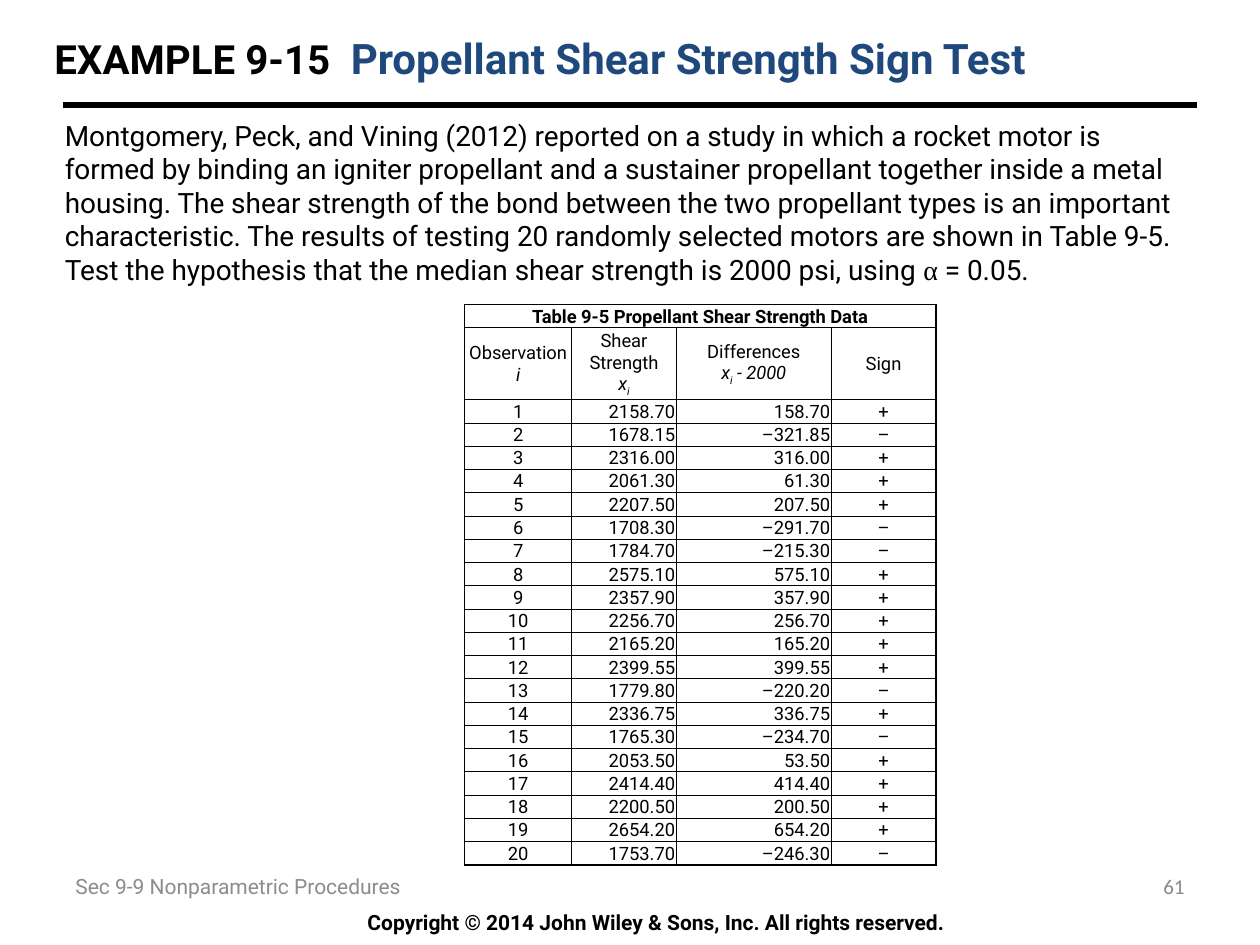
from copy import deepcopy
from lxml.etree import SubElement
from pptx import Presentation
from pptx.dml.color import RGBColor
from pptx.enum.shapes import MSO_CONNECTOR
from pptx.enum.text import MSO_ANCHOR, PP_ALIGN
from pptx.oxml.ns import qn
from pptx.util import Pt

FONT = "Roboto"
BLACK = "000000"
HYPOTHESIZED_MEDIAN = 2000
STRENGTHS = [
    2158.70, 1678.15, 2316.00, 2061.30, 2207.50, 1708.30, 1784.70,
    2575.10, 2357.90, 2256.70, 2165.20, 2399.55, 1779.80, 2336.75,
    1765.30, 2053.50, 2414.40, 2200.50, 2654.20, 1753.70,
]
HEADINGS = [
    [("Observation\n", {}), ("i", {"italic": True})],
    [("Shear Strength\n", {}), ("x", {"italic": True}),
     ("i", {"italic": True, "baseline": -25})],
    [("Differences\n", {}), ("x", {"italic": True}),
     ("i", {"italic": True, "baseline": -25}), (" - 2000", {"italic": True})],
    [("Sign", {})],
]


def color(value):
    return RGBColor.from_string(value)


def add_span(para, text, size, name=FONT, shade=BLACK, bold=False, italic=False, baseline=0):
    span = para.add_run()
    span.text = text.rstrip("\n")
    span.font.size = Pt(size)
    span.font.name = name
    span.font.color.rgb = color(shade)
    span.font.bold = bold
    span.font.italic = italic
    properties = span.font._element
    if baseline:
        properties.set("baseline", str(baseline * 1000))
    if text.endswith("\n"):
        para.add_line_break()
        para._p[-1].append(deepcopy(properties))


def add_text(page, box, spans, align=PP_ALIGN.LEFT, anchor=MSO_ANCHOR.MIDDLE):
    frame = page.shapes.add_textbox(*map(Pt, box)).text_frame
    frame.word_wrap = True
    frame.vertical_anchor = anchor
    para = frame.paragraphs[0]
    para.alignment = align
    for text, style in spans:
        add_span(para, text, **style)
    return para


def add_title(page, box):
    para = add_text(page, box, [
        ("EXAMPLE 9-15\t", {"size": 23, "bold": True}),
        ("Propellant Shear Strength Sign Test", {"size": 24, "shade": "1F497D", "bold": True}),
    ])
    tabs = SubElement(para._p.get_or_add_pPr(), qn("a:tabLst"))
    SubElement(tabs, qn("a:tab"), pos=str(Pt(169.4)), algn="l")


def add_rule(page, left, right, top):
    rule = page.shapes.add_connector(MSO_CONNECTOR.STRAIGHT, Pt(left), Pt(top), Pt(right), Pt(top))
    rule.line.color.rgb = color(BLACK)
    rule.line.width = Pt(3)
    SubElement(rule._element.spPr, qn("a:effectLst"))


def add_problem(page, box):
    add_text(page, box, [
        ("Montgomery, Peck, and Vining (2012) reported on a study in which a rocket motor is "
         "formed by binding an igniter propellant and a sustainer propellant together inside a "
         "metal housing. The shear strength of the bond between the two propellant types is an "
         "important characteristic. The results of testing 20 randomly selected motors are shown "
         "in Table 9-5. Test the hypothesis that the median shear strength is 2000 psi, using ",
         {"size": 16}),
        ("α", {"size": 16, "name": "Times New Roman"}),
        (" = 0.05.", {"size": 16}),
    ], anchor=MSO_ANCHOR.TOP)


def set_borders(cell, widths):
    properties = cell._tc.get_or_add_tcPr()
    for index, (side, width) in enumerate(zip(("lnL", "lnR", "lnT", "lnB"), widths)):
        line = properties.makeelement(qn(f"a:{side}"), {"w": str(Pt(width))})
        fill = SubElement(line, qn("a:solidFill"))
        SubElement(fill, qn("a:srgbClr"), val=BLACK)
        properties.insert(index, line)


def fill_cell(cell, spans, align, anchor=MSO_ANCHOR.MIDDLE):
    cell.fill.background()
    cell.vertical_anchor = anchor
    cell.margin_left = cell.margin_right = cell.margin_top = Pt(0.7)
    cell.margin_bottom = 0
    para = cell.text_frame.paragraphs[0]
    para.alignment = align
    for text, style in spans:
        add_span(para, text, 10.5, **style)


def observation_cells(number, strength):
    difference = strength - HYPOTHESIZED_MEDIAN
    sign = "+" if difference > 0 else "–"
    minus = "" if difference > 0 else "–"
    return [str(number), f"{strength:.2f}", f"{minus}{abs(difference):.2f}", sign]


def add_strength_table(page, box):
    left, top, width, height = box
    heading_height = 41.1
    row_count, column_count = len(STRENGTHS) + 2, len(HEADINGS)
    frame = page.shapes.add_table(row_count, column_count, *map(Pt, box))
    table = frame.table
    table.first_row = table.horz_banding = False
    for column, share in zip(table.columns, (0.85, 0.83, 1.23, 0.83)):
        column.width = Pt(round(width * share / 3.74, 2))
    for row in table.rows:
        row.height = Pt(round((height - heading_height) / (row_count - 1), 2))
    table.rows[1].height = Pt(heading_height)

    table.cell(0, 0).merge(table.cell(0, column_count - 1))
    fill_cell(table.cell(0, 0), [("Table 9-5 Propellant Shear Strength Data", {"bold": True})],
              PP_ALIGN.CENTER, MSO_ANCHOR.BOTTOM)
    for column, spans in enumerate(HEADINGS):
        fill_cell(table.cell(1, column), spans, PP_ALIGN.CENTER)
    for number, strength in enumerate(STRENGTHS, 1):
        for column, text in enumerate(observation_cells(number, strength)):
            align = PP_ALIGN.RIGHT if column in (1, 2) else PP_ALIGN.CENTER
            fill_cell(table.cell(number + 1, column), [(text, {})], align)

    for row in range(row_count):
        for column in range(column_count):
            outer = (column == 0, column == column_count - 1 or row == 0,
                     row == 0, row == row_count - 1)
            set_borders(table.cell(row, column), [1 if edge else 0.5 for edge in outer])


def add_footer(page, section_box, number_box, copyright_box):
    add_text(page, section_box,
             [("Sec 9-9 Nonparametric Procedures", {"size": 12, "shade": "8C8C8C"})])
    add_text(page, number_box, [("61", {"size": 12, "name": "Calibri", "shade": "898989"})],
             PP_ALIGN.RIGHT)
    add_text(page, copyright_box,
             [("Copyright © 2014 John Wiley & Sons, Inc. All rights reserved.",
               {"size": 12, "bold": True})],
             PP_ALIGN.CENTER, MSO_ANCHOR.TOP)


def main():
    deck = Presentation()
    deck.slide_width, deck.slide_height = Pt(720), Pt(540)
    page = deck.slides.add_slide(deck.slide_layouts[6])
    add_title(page, (24, 0, 690, 66))
    add_rule(page, 36, 684, 60)
    add_problem(page, (30, 64, 654, 104.4))
    add_strength_table(page, (265.5, 174, 269.3, 319.7))
    add_footer(page, (36, 492, 390, 28.8), (600, 492, 84, 28.8), (120, 516, 510, 21.6))
    deck.save("out.pptx")


if __name__ == "__main__":
    main()
